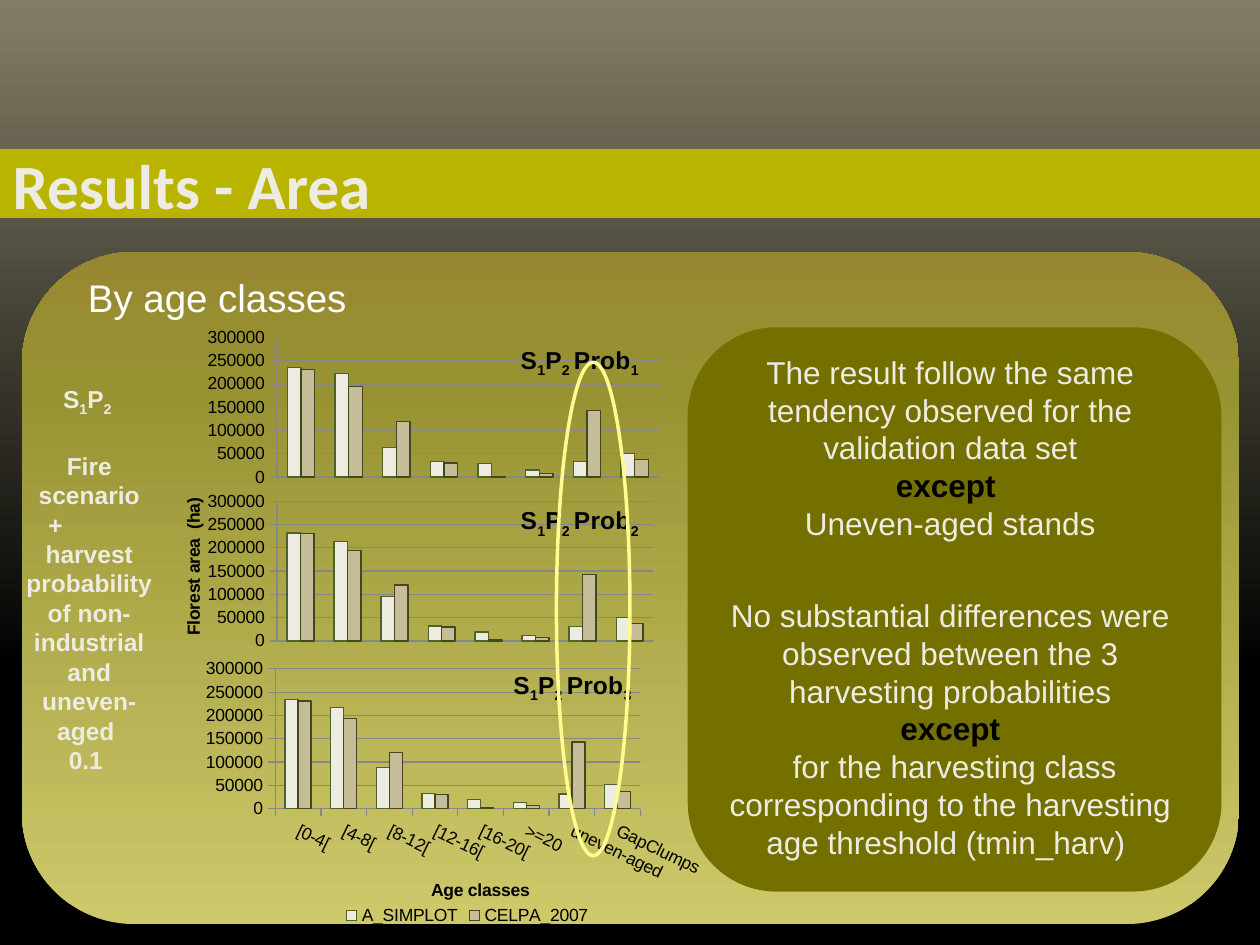
from copy import deepcopy
from dataclasses import dataclass

from pptx import Presentation
from pptx import util as u
from pptx.chart.data import CategoryChartData
from pptx.dml.color import RGBColor
from pptx.enum import chart as ch, shapes as sh, text as tx
from pptx.oxml import parse_xml
from pptx.oxml.ns import nsdecls, qn

CREAM = RGBColor(0xEE, 0xEC, 0xE1)
WHITE = RGBColor(0xFF, 0xFF, 0xFF)
BLACK = RGBColor(0, 0, 0)
STONE = RGBColor(0x82, 0x7E, 0x66)
BAND = RGBColor(0xB8, 0xB4, 0x00)
OLIVE = RGBColor(0x73, 0x70, 0x00)
YELLOW = RGBColor(0xFF, 0xFC, 0x8F)
GRID = RGBColor(0x87, 0x87, 0x87)
PANEL_STOPS = [(0, RGBColor(0xCD, 0xC8, 0x69)), (0.8, RGBColor(0x97, 0x92, 0x32)),
               (1, RGBColor(0x97, 0x87, 0x30))]
SERIES_STYLES = [(CREAM, RGBColor(0x4F, 0x62, 0x28)),
                 (RGBColor(0xC4, 0xBD, 0x97), RGBColor(0x44, 0x46, 0x1E))]
AGE_CLASSES = ["[0-4[", "[4-8[", "[8-12[", "[12-16[", "[16-20[", ">=20",
               "uneven-aged", "GapClumps"]
OBSERVED = [231000, 194000, 120000, 30000, 2000, 7000, 143000, 37000]


@dataclass
class Run:
    text: str
    color: RGBColor = CREAM
    bold: bool = False
    subscript: bool = False


@dataclass
class Para:
    runs: list[Run]
    before: float = 0
    indent: float | None = None  # left-aligned at this indent when given


@dataclass
class AreaChart:
    number: str
    left: float
    top: float
    simulated: list[int]
    plot_left: float
    plot_width: float
    title_at: tuple[float, float]


CHARTS = [
    AreaChart("1", 96, 162, [236000, 223000, 64000, 33000, 29000, 15000, 34000, 51000],
              0.2, 0.7, (0.64, 0.18)),
    AreaChart("2", 96, 255.6, [232000, 214000, 95000, 32000, 19000, 12000, 31000, 51000],
              0.2, 0.69, (0.64, 0.17)),
    AreaChart("3", 95, 351.4, [235000, 217000, 88000, 32000, 20000, 13000, 31000, 51000],
              0.2, 0.67, (0.63, 0.16)),
]


def scenario_runs(color: RGBColor, ending: str = "") -> list[Run]:
    runs = [Run("S", color, True), Run("1", color, True, True),
            Run("P", color, True), Run("2 ", color, True, True)]
    return runs + ([Run(ending, color, True)] if ending else [])


def add_runs(para, runs: list[Run], size: float, font: str = "Arial") -> None:
    for item in runs:
        span = para.add_run()
        span.text = item.text
        span.font.name, span.font.size = font, u.Pt(size)
        span.font.bold, span.font.color.rgb = item.bold, item.color
        if item.subscript:
            span.font._element.set("baseline", "-25000")


def add_text(slide, frame: tuple, paras: list[Para], size: float):
    box = slide.shapes.add_textbox(*map(u.Pt, frame))
    body = box.text_frame
    body.word_wrap = True
    for index, item in enumerate(paras):
        para = body.paragraphs[0] if index == 0 else body.add_paragraph()
        para.alignment = tx.PP_ALIGN.CENTER
        if item.indent is not None:
            para.alignment = tx.PP_ALIGN.LEFT
            para._p.get_or_add_pPr().set("marL", str(u.Pt(item.indent)))
        if item.before:
            para.space_before = u.Pt(item.before)
        add_runs(para, item.runs, size)
    return body


def add_shape(slide, kind, frame: tuple, color: RGBColor | None = None):
    shape = slide.shapes.add_shape(kind, *map(u.Pt, frame))
    shape.shadow.inherit = False
    shape.line.fill.background()
    if color is None:
        shape.fill.background()
    else:
        shape.fill.solid()
        shape.fill.fore_color.rgb = color
    return shape


def set_gradient(fill, owner, stops: list, angle: float) -> None:
    fill.gradient()
    fill.gradient_angle = angle
    stop_list = owner.xpath(".//a:gsLst")[0]
    while len(stop_list) < len(stops):
        stop_list.append(deepcopy(stop_list[0]))
    for stop, (position, color) in zip(fill.gradient_stops, stops):
        stop.position, stop.color.rgb = position, color


def place(element, index: int, **fractions: float) -> None:
    """Give a chart part a manual layout, in fractions of the chart."""
    for old in element.findall(qn("c:layout")):
        element.remove(old)
    target = '<c:layoutTarget val="inner"/>' if "w" in fractions else ""
    modes = "".join(f'<c:{key}Mode val="edge"/>' for key in "xy")
    values = "".join(f'<c:{key} val="{value}"/>' for key, value in fractions.items())
    element.insert(index, parse_xml(
        f'<c:layout {nsdecls("c")}><c:manualLayout>{target}{modes}{values}'
        '</c:manualLayout></c:layout>'))


def set_title(title, runs: list[Run], size: float, at: tuple[float, float]) -> None:
    add_runs(title.text_frame.paragraphs[0], runs, size)
    place(title._element, 1, x=at[0], y=at[1])


def add_area_chart(slide, item: AreaChart, is_last: bool):
    data = CategoryChartData()
    data.categories = AGE_CLASSES if is_last else [str(n) for n in range(1, 9)]
    names = ("A_SIMPLOT", "CELPA_2007") if is_last else ("Series 1", "Series 2")
    for name, values in zip(names, (item.simulated, OBSERVED)):
        data.add_series(name, values)
    chart = slide.shapes.add_chart(
        ch.XL_CHART_TYPE.COLUMN_CLUSTERED, u.Pt(item.left), u.Pt(item.top),
        u.Pt(311.5), u.Pt(181.5), data).chart
    chart.font.name, chart.font.size = "Arial", u.Pt(10)
    chart.font.color.rgb = BLACK
    chart.has_legend = False
    chart.has_title = True
    set_title(chart.chart_title, scenario_runs(BLACK, "Prob") + [Run(item.number, BLACK, True, True)],
              14, item.title_at)
    plot = chart.plots[0]
    plot.gap_width, plot.overlap, plot.vary_by_categories = 150, 0, False
    for series, (fill, line) in zip(plot.series, SERIES_STYLES):
        series.format.fill.solid()
        series.format.fill.fore_color.rgb = fill
        series.format.line.color.rgb = line
        series.format.line.width = u.Pt(0.75)
    value_axis = chart.value_axis
    value_axis.minimum_scale, value_axis.maximum_scale, value_axis.major_unit = 0, 300000, 50000
    value_axis.major_gridlines.format.line.color.rgb = GRID
    for axis in (value_axis, chart.category_axis):
        axis.major_tick_mark = ch.XL_TICK_MARK.OUTSIDE
        axis.format.line.color.rgb = GRID
    chart.category_axis.visible = is_last
    space = chart._chartSpace
    area = space.xpath(".//c:plotArea")[0]
    place(area, 0, x=item.plot_left, y=0.17, w=item.plot_width, h=0.44)
    clear = parse_xml(f'<c:spPr {nsdecls("c", "a")}><a:noFill/><a:ln><a:noFill/></a:ln></c:spPr>')
    area.append(deepcopy(clear))
    space.find(qn("c:chart")).addnext(clear)
    return chart


def finish_bottom_chart(chart) -> None:
    """Add the legend, the axis title and the slanted labels of every second class."""
    axis = chart.category_axis
    set_title(axis.axis_title, [Run("Age classes", BLACK, True)], 10, (0.48, 0.82))
    axis.tick_labels.font.size = u.Pt(10)
    axis._element.xpath("./c:txPr/a:bodyPr")[0].set("rot", "1560000")
    axis._element.find(qn("c:noMultiLvlLbl")).addprevious(
        parse_xml(f'<c:tickLblSkip {nsdecls("c")} val="2"/>'))
    chart.has_legend = True
    chart.legend.position = ch.XL_LEGEND_POSITION.BOTTOM
    chart.legend.include_in_layout = False
    place(chart.legend._element, 1, x=0.32, y=0.9)


def main() -> None:
    deck = Presentation()
    deck.slide_width, deck.slide_height = u.Pt(720), u.Pt(540)
    page = deck.slides.add_slide(deck.slide_layouts[5])
    set_gradient(page.background.fill, page._element, [(0, STONE), (0.71, BLACK)], 270)

    panel = add_shape(page, sh.MSO_SHAPE.ROUNDED_RECTANGLE, (12.5, 144, 695.5, 384), BAND)
    set_gradient(panel.fill, panel._element, PANEL_STOPS, 90)
    add_shape(page, sh.MSO_SHAPE.RECTANGLE, (0, 85, 720, 39.5), BAND)

    title = page.shapes.title
    title.left, title.top, title.width, title.height = map(u.Pt, (0, 80, 720, 51))
    title.text_frame.auto_size = tx.MSO_AUTO_SIZE.NONE
    title.text_frame.vertical_anchor = tx.MSO_ANCHOR.TOP
    para = title.text_frame.paragraphs[0]
    para.alignment = tx.PP_ALIGN.LEFT
    add_runs(para, [Run("Results - Area", bold=True)], 36, "Calibri")
    page.shapes._spTree.append(title._element)  # in front of the band

    heading = add_text(page, (36, 144, 670, 43), [Para([Run("By age classes", WHITE)], indent=7.2)], 22)
    heading.paragraphs[0].line_spacing = 1.35

    charts = [add_area_chart(page, item, item is CHARTS[-1]) for item in CHARTS]
    set_title(charts[1].value_axis.axis_title, [Run("Florest area  (ha)", BLACK, True)], 10, (0.02, 0.15))
    finish_bottom_chart(charts[-1])

    add_text(page, (6, 216, 90, 266), [
        Para(scenario_runs(CREAM)),
        Para([Run("Fire scenario", bold=True)], before=19),
        Para([Run("+", bold=True)], indent=14.5),
        Para([Run("harvest probability of non-industrial and uneven-aged ", bold=True)]),
        Para([Run("0.1 ", bold=True)])], 14)

    ring = add_shape(page, sh.MSO_SHAPE.OVAL, (318, 207, 42, 282))
    ring.line.color.rgb, ring.line.width = YELLOW, u.Pt(2)

    add_shape(page, sh.MSO_SHAPE.ROUNDED_RECTANGLE, (393, 187, 305, 322.5), OLIVE)
    add_text(page, (396, 198, 294, 300), [
        Para([Run("The result follow the same tendency observed for the validation data set")]),
        Para([Run("except ", BLACK, True)]),
        Para([Run("Uneven-aged stands")]),
        Para([Run("No substantial differences were observed between the 3 harvesting probabilities")],
             before=31),
        Para([Run("except", BLACK, True)]),
        Para([Run(" for the harvesting class corresponding to the harvesting age threshold (tmin_harv) ")]),
    ], 18)
    deck.save("out.pptx")


if __name__ == "__main__":
    main()
